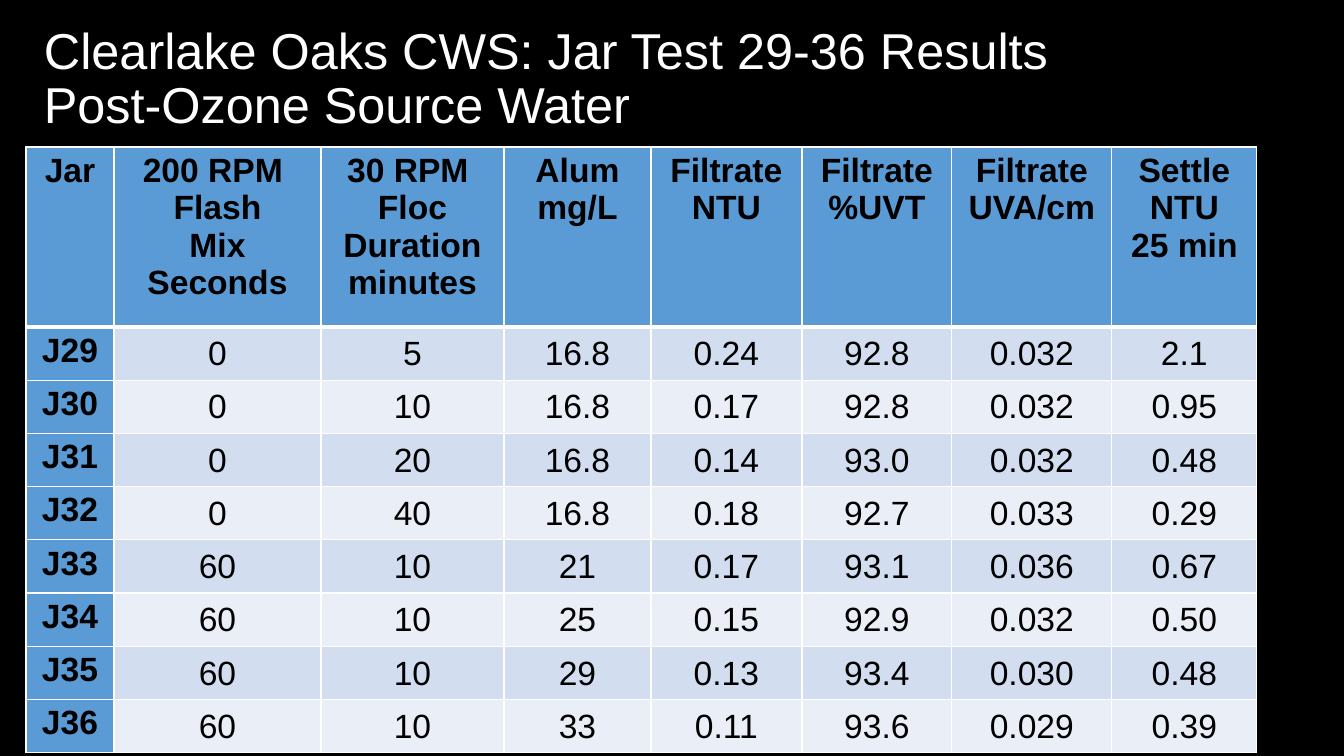
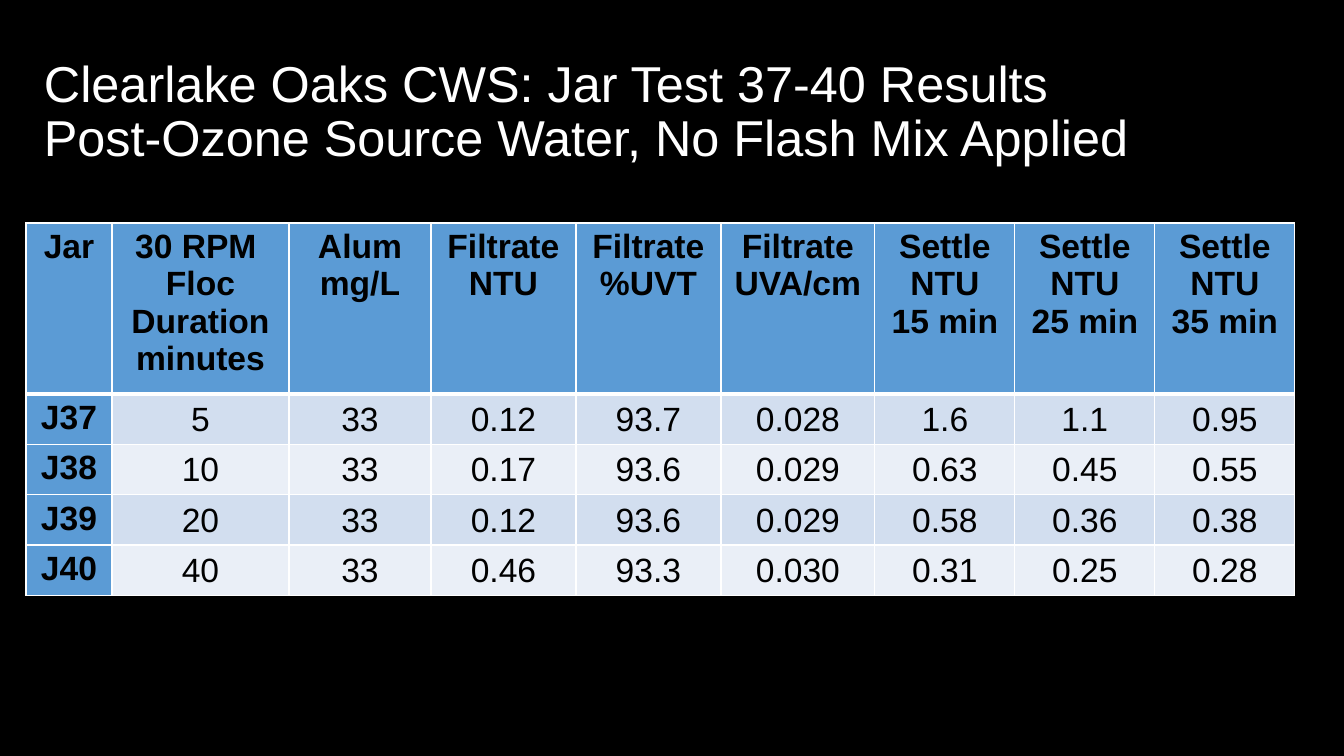
"""Build two slides of jar test results, each a title above a table."""
from dataclasses import dataclass
from typing import Any

from lxml.etree import SubElement
from pptx import Presentation
from pptx.dml.color import RGBColor
from pptx.enum.text import MSO_ANCHOR as Anchor, PP_ALIGN as Align
from pptx.oxml.ns import qn
from pptx.util import Emu, Pt

EMU_PER_PX = 914400 / 100.8
SLIDE_WIDTH, SLIDE_HEIGHT = 1344, 756
TITLE_LEFT, TITLE_WIDTH = 34, 1280
TABLE_LEFT = 26
BLANK_LAYOUT = 6

BLACK, WHITE = "000000", "FFFFFF"
HEADING_BLUE = "5B9BD5"
BANDS = ("D2DEEF", "EAEFF7")
THIN, THICK = 1, 3

FLOC = "30 RPM \nFloc\nDuration\nminutes"
WATER_HEADINGS = ("Alum\nmg/L", "Filtrate\nNTU", "Filtrate\n%UVT", "Filtrate\nUVA/cm")
SETTLE_15, SETTLE_25, SETTLE_35 = (f"Settle\nNTU\n{minutes} min" for minutes in (15, 25, 35))


@dataclass(frozen=True)
class ResultSlide:
    title_lines: tuple[str, ...]
    title_top: int
    title_height: int
    table_top: int
    heading_height: int
    body_height: int
    columns: tuple[int, ...]
    headings: tuple[str, ...]
    records: tuple[str, ...]


RESULT_SLIDES = (
    ResultSlide(
        ("Clearlake Oaks CWS: Jar Test 29-36 Results", "Post-Ozone Source Water"),
        8, 144, 147, 180, 426,
        (88, 207, 183, 147, 151, 150, 160, 145),
        ("Jar", "200 RPM \nFlash\nMix\nSeconds", FLOC, *WATER_HEADINGS, SETTLE_25),
        (
            "J29 0 5 16.8 0.24 92.8 0.032 2.1",
            "J30 0 10 16.8 0.17 92.8 0.032 0.95",
            "J31 0 20 16.8 0.14 93.0 0.032 0.48",
            "J32 0 40 16.8 0.18 92.7 0.033 0.29",
            "J33 60 10 21 0.17 93.1 0.036 0.67",
            "J34 60 10 25 0.15 92.9 0.032 0.50",
            "J35 60 10 29 0.13 93.4 0.030 0.48",
            "J36 60 10 33 0.11 93.6 0.029 0.39",
        ),
    ),
    ResultSlide(
        ("Clearlake Oaks CWS: Jar Test 37-40 Results",
         "Post-Ozone Source Water, No Flash Mix Applied"),
        40, 146, 223, 160, 190,
        (86, 177, 142, 145, 145, 154, 140, 140, 140),
        ("Jar", FLOC, *WATER_HEADINGS, SETTLE_15, SETTLE_25, SETTLE_35),
        (
            "J37 5 33 0.12 93.7 0.028 1.6 1.1 0.95",
            "J38 10 33 0.17 93.6 0.029 0.63 0.45 0.55",
            "J39 20 33 0.12 93.6 0.029 0.58 0.36 0.38",
            "J40 40 33 0.46 93.3 0.030 0.31 0.25 0.28",
        ),
    ),
)


def px(length: float) -> Emu:
    """Turn pixels into EMU."""
    return Emu(round(length * EMU_PER_PX))


def color(value: str) -> RGBColor:
    """Turn a hex string into a colour."""
    return RGBColor.from_string(value)


def apply_format(target: Any, values: dict[str, Any]) -> None:
    """Set each named attribute on the target."""
    for name, value in values.items():
        setattr(target, name, value)


def paint(fill: Any, value: str) -> None:
    """Give a fill one solid colour."""
    fill.solid()
    fill.fore_color.rgb = color(value)


def style_font(font: Any, size: int, value: str, bold: bool = False) -> None:
    """Set the typeface, size, weight and colour of a font."""
    apply_format(font, {"name": "Arial", "size": Pt(size), "bold": bold})
    font.color.rgb = color(value)


def add_title(slide: Any, result: ResultSlide) -> None:
    """Add the white title with its line breaks."""
    box = slide.shapes.add_textbox(
        px(TITLE_LEFT), px(result.title_top), px(TITLE_WIDTH), px(result.title_height))
    apply_format(box.text_frame, {"word_wrap": True, "vertical_anchor": Anchor.MIDDLE})
    paragraph = box.text_frame.paragraphs[0]
    paragraph.line_spacing = 0.9
    for index, line in enumerate(result.title_lines):
        if index:
            paragraph.add_line_break()
        run = paragraph.add_run()
        run.text = line
        style_font(run.font, 36, WHITE)


def add_borders(cell: Any, top: int, bottom: int) -> None:
    """Draw white borders around a cell, widths in points."""
    properties = cell._tc.get_or_add_tcPr()
    for side, width in {"L": THIN, "R": THIN, "T": top, "B": bottom}.items():
        line = SubElement(properties, qn(f"a:ln{side}"), w=str(Pt(width)))
        SubElement(SubElement(line, qn("a:solidFill")), qn("a:srgbClr"), val=WHITE)


def fill_cell(cell: Any, text: str, row: int, column: int) -> None:
    """Write one cell as a heading or as a banded value."""
    heading = row == 0 or column == 0
    cell.text = text
    left, top, right, bottom = (10, 5, 10, 5) if heading else (1, 1, 1, 0)
    apply_format(cell, {
        "margin_left": px(left),
        "margin_top": px(top),
        "margin_right": px(right),
        "margin_bottom": px(bottom),
        "vertical_anchor": Anchor.TOP if heading else Anchor.MIDDLE,
    })
    add_borders(cell, THICK if row == 1 else THIN, THICK if row == 0 else THIN)
    paint(cell.fill, HEADING_BLUE if heading else BANDS[(row - 1) % 2])
    for paragraph in cell.text_frame.paragraphs:
        paragraph.alignment = Align.CENTER
        for run in paragraph.runs:
            style_font(run.font, 24, BLACK, heading)


def add_results(slide: Any, result: ResultSlide) -> None:
    """Add the table of headings and jar records."""
    rows = [result.headings, *(record.split() for record in result.records)]
    table = slide.shapes.add_table(
        len(rows), len(result.columns), px(TABLE_LEFT), px(result.table_top),
        px(sum(result.columns)), px(result.heading_height + result.body_height)).table
    apply_format(table, {"first_row": True, "first_col": True, "horz_banding": True})
    for column, width in zip(table.columns, result.columns):
        column.width = px(width)
    for index, texts in enumerate(rows):
        height = result.body_height / len(result.records) if index else result.heading_height
        table.rows[index].height = px(height)
        for column, text in enumerate(texts):
            fill_cell(table.cell(index, column), text, index, column)


def main() -> None:
    """Build and save the presentation."""
    presentation = Presentation()
    apply_format(presentation, {
        "slide_width": px(SLIDE_WIDTH), "slide_height": px(SLIDE_HEIGHT)})
    for result in RESULT_SLIDES:
        slide = presentation.slides.add_slide(presentation.slide_layouts[BLANK_LAYOUT])
        paint(slide.background.fill, BLACK)
        add_title(slide, result)
        add_results(slide, result)
    presentation.save("out.pptx")


if __name__ == "__main__":
    main()
